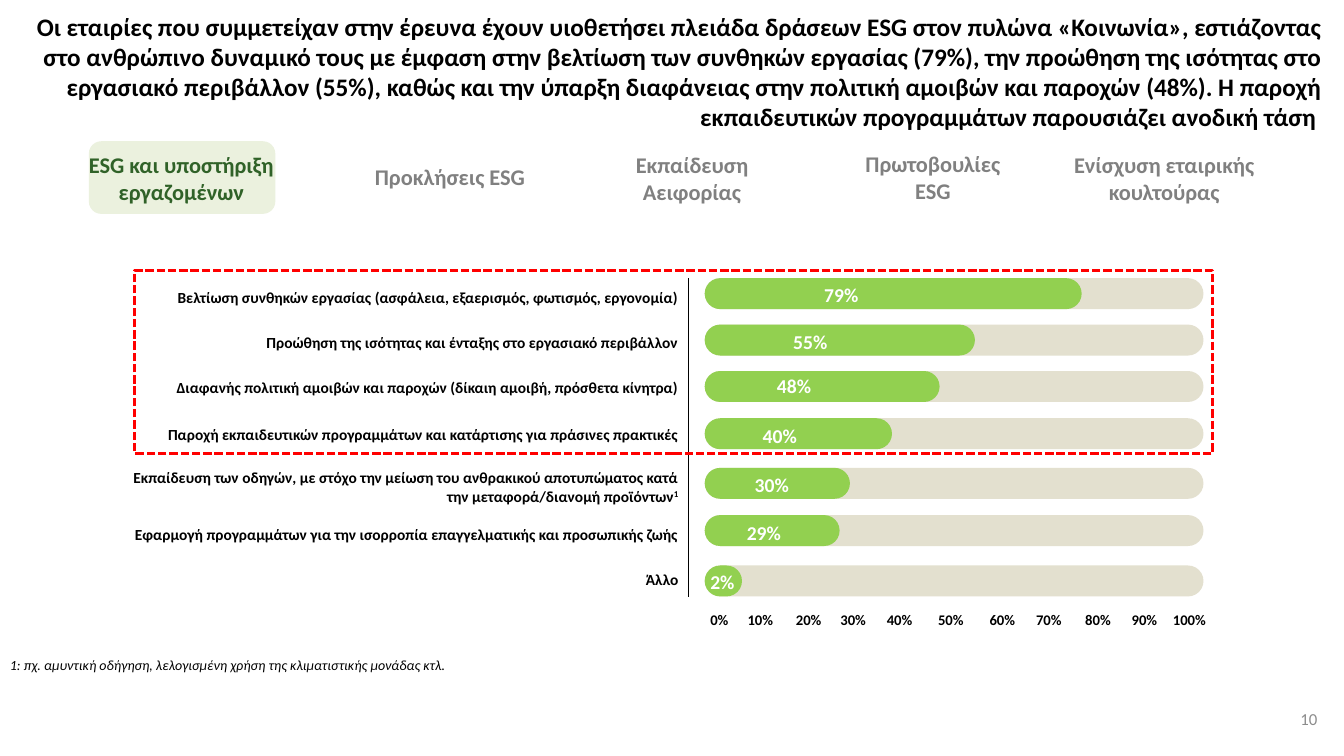
from lxml import etree
from pptx import Presentation
from pptx.dml.color import RGBColor
from pptx.enum import dml, shapes, text
from pptx.oxml import ns
from pptx.util import Cm, Pt

# Content (lengths in cm)
TITLE = (
    "Οι εταιρίες που συμμετείχαν στην έρευνα έχουν υιοθετήσει πλειάδα δράσεων ESG στον "
    "πυλώνα «Κοινωνία», εστιάζοντας στο ανθρώπινο δυναμικό τους με έμφαση στην βελτίωση "
    "των συνθηκών εργασίας (79%), την προώθηση της ισότητας στο εργασιακό περιβάλλον "
    "(55%), καθώς και την ύπαρξη διαφάνειας στην πολιτική αμοιβών και παροχών (48%). "
    "Η παροχή εκπαιδευτικών προγραμμάτων παρουσιάζει ανοδική τάση "
)
# Section, left, top, width
SECTIONS = [
    ("ESG και υποστήριξη εργαζομένων", 1.93, 3.68, 5.28),
    ("Προκλήσεις ESG", 8.99, 3.99, 4.7),
    ("Εκπαίδευση Αειφορίας", 15.09, 3.68, 4.7),
    ("Πρωτοβουλίες ESG", 21.16, 3.66, 4.7),
    ("Ενίσχυση εταιρικής κουλτούρας", 26.7, 3.68, 5.28),
]
# Action, footnote mark, label middle, bar middle, bar length, share, share left, share middle
ACTIONS = [
    ("Βελτίωση συνθηκών εργασίας (ασφάλεια, εξαερισμός, φωτισμός, εργονομία)", "",
     7.49, 7.4, 9.5, "79%", 20.52, 7.44),
    ("Προώθηση της ισότητας και ένταξης στο εργασιακό περιβάλλον", "",
     8.64, 8.57, 6.81, "55%", 19.74, 8.61),
    ("Διαφανής πολιτική αμοιβών και παροχών (δίκαιη αμοιβή, πρόσθετα κίνητρα)", "",
     9.75, 9.74, 5.92, "48%", 19.33, 9.73),
    ("Παροχή εκπαιδευτικών προγραμμάτων και κατάρτισης για πράσινες πρακτικές", "",
     10.95, 10.93, 4.72, "40%", 18.97, 11),
    ("Εκπαίδευση των οδηγών, με στόχο την μείωση του ανθρακικού αποτυπώματος κατά "
     "την μεταφορά/διανομή προϊόντων", "1",
     12.27, 12.18, 3.66, "30%", 18.77, 12.22),
    ("Εφαρμογή προγραμμάτων για την ισορροπία επαγγελματικής και προσωπικής ζωής", "",
     13.46, 13.37, 3.4, "29%", 18.57, 13.44),
    ("Άλλο", "", 14.61, 14.64, 0.94, "2%", 17.65, 14.66),
]
TICK_LEFTS = [17.65, 18.59, 19.81, 20.93, 22.1, 23.39, 24.69, 25.86, 27.1, 28.27, 29.31]
FOOTNOTE = "1: πχ. αμυντική οδήγηση, λελογισμένη χρήση της κλιματιστικής μονάδας κτλ."
PAGE = "10"

BLACK = RGBColor(0, 0, 0)
WHITE = RGBColor(0xFF, 0xFF, 0xFF)
GRAY = RGBColor(0x80, 0x80, 0x80)
PAGE_GRAY = RGBColor(0x8C, 0x8C, 0x8C)
DARK_GREEN = RGBColor(0x30, 0x62, 0x28)
PALE_GREEN = RGBColor(0xEB, 0xF1, 0xDE)
BAR_GREEN = RGBColor(0x92, 0xD0, 0x50)
TRACK_BEIGE = RGBColor(0xDD, 0xD9, 0xC3)
RED = RGBColor(0xFF, 0, 0)

BAR_LEFT, BAR_HEIGHT, TRACK_LENGTH = 17.76, 0.78, 12.57
LABEL_LEFT, LABEL_WIDTH, LABEL_HEIGHT = 2.85, 14.5, 1.12
SHARE_HEIGHT = 0.86

ALIGN = text.PP_ALIGN
ANCHOR = text.MSO_ANCHOR

deck = Presentation()
deck.slide_width, deck.slide_height = Cm(33.87), Cm(19.05)
slide = deck.slides.add_slide(deck.slide_layouts[5])


def write(holder, words, size, color, align=ALIGN.LEFT, anchor=ANCHOR.TOP,
          bold=True, italic=False):
    frame = holder.text_frame
    frame.word_wrap = True
    frame.auto_size = text.MSO_AUTO_SIZE.NONE
    frame.vertical_anchor = anchor
    frame.text = words
    paragraph = frame.paragraphs[0]
    paragraph.alignment = align
    style(paragraph.runs[0], size, color, bold, italic)
    return paragraph


def style(run, size, color, bold=True, italic=False):
    font = run.font
    font.name, font.size, font.bold, font.italic = "Calibri", Pt(size), bold, italic
    font.color.rgb = color


def add_words(left, top, width, height, *args, **options):
    box = slide.shapes.add_textbox(Cm(left), Cm(top), Cm(width), Cm(height))
    return write(box, *args, **options)


def add_pill(left, top, width, height, color, rounding=0.5):
    pill = slide.shapes.add_shape(shapes.MSO_SHAPE.ROUNDED_RECTANGLE,
                                  Cm(left), Cm(top), Cm(width), Cm(height))
    pill.shadow.inherit = False
    pill.adjustments[0] = rounding
    pill.fill.solid()
    pill.fill.fore_color.rgb = color
    pill.line.fill.background()
    return pill


# Title
title = slide.shapes.title
title.left, title.top, title.width, title.height = Cm(0.25), Cm(0.15), Cm(33.32), Cm(3.33)
write(title, TITLE, 18, BLACK, ALIGN.RIGHT)

# Section tabs, the first one active
add_pill(2.24, 3.56, 4.7, 1.83, PALE_GREEN, 0.17)
for index, (section, left, top, width) in enumerate(SECTIONS):
    add_words(left, top, width, 1.63, section, 16,
              GRAY if index else DARK_GREEN, ALIGN.CENTER)

# Axis line
axis = slide.shapes.add_connector(shapes.MSO_CONNECTOR.STRAIGHT,
                                  Cm(17.35), Cm(7.01), Cm(17.35), Cm(15.04))
axis.line.color.rgb = BLACK
axis.line.width = Pt(1)
etree.SubElement(axis._element.spPr, ns.qn("a:effectLst"))

# Actions: label, track, bar and share
for action, mark, label_mid, bar_mid, length, share, share_left, share_mid in ACTIONS:
    label = add_words(LABEL_LEFT, label_mid - LABEL_HEIGHT / 2, LABEL_WIDTH, LABEL_HEIGHT,
                      action, 11, BLACK, ALIGN.RIGHT, ANCHOR.MIDDLE)
    if mark:
        note = label.add_run()
        note.text = mark
        style(note, 11, BLACK)
        note._r.get_or_add_rPr().set("baseline", "30000")
    bar_top = bar_mid - BAR_HEIGHT / 2
    track = add_pill(BAR_LEFT, bar_top, TRACK_LENGTH, BAR_HEIGHT, TRACK_BEIGE)
    track_color = track._element.spPr.find(".//" + ns.qn("a:srgbClr"))
    etree.SubElement(track_color, ns.qn("a:alpha"), val="80000")
    add_pill(BAR_LEFT, bar_top, length, BAR_HEIGHT, BAR_GREEN)
    add_words(share_left, share_mid - SHARE_HEIGHT / 2, 1.7, SHARE_HEIGHT, share, 14, WHITE)

# Percentage scale
for step, left in enumerate(TICK_LEFTS):
    tick = add_words(left, 15.29, 2, 0.7, f"{step * 10}%", 10.5, BLACK)
    tick.line_spacing = 0.95

# Frame around the leading actions
leaders = slide.shapes.add_shape(shapes.MSO_SHAPE.RECTANGLE,
                                 Cm(3.4), Cm(6.81), Cm(27.15), Cm(4.62))
leaders.shadow.inherit = False
leaders.fill.background()
leaders.line.color.rgb = RED
leaders.line.width = Pt(2)
leaders.line.dash_style = dml.MSO_LINE.SQUARE_DOT

# Footnote and page number
add_words(0, 16.43, 33.86, 0.68, FOOTNOTE, 10, BLACK, bold=False, italic=True)
add_words(27.53, 17.6, 5.92, 1.02, PAGE, 12, PAGE_GRAY, ALIGN.RIGHT, ANCHOR.MIDDLE, bold=False)

deck.save("out.pptx")
